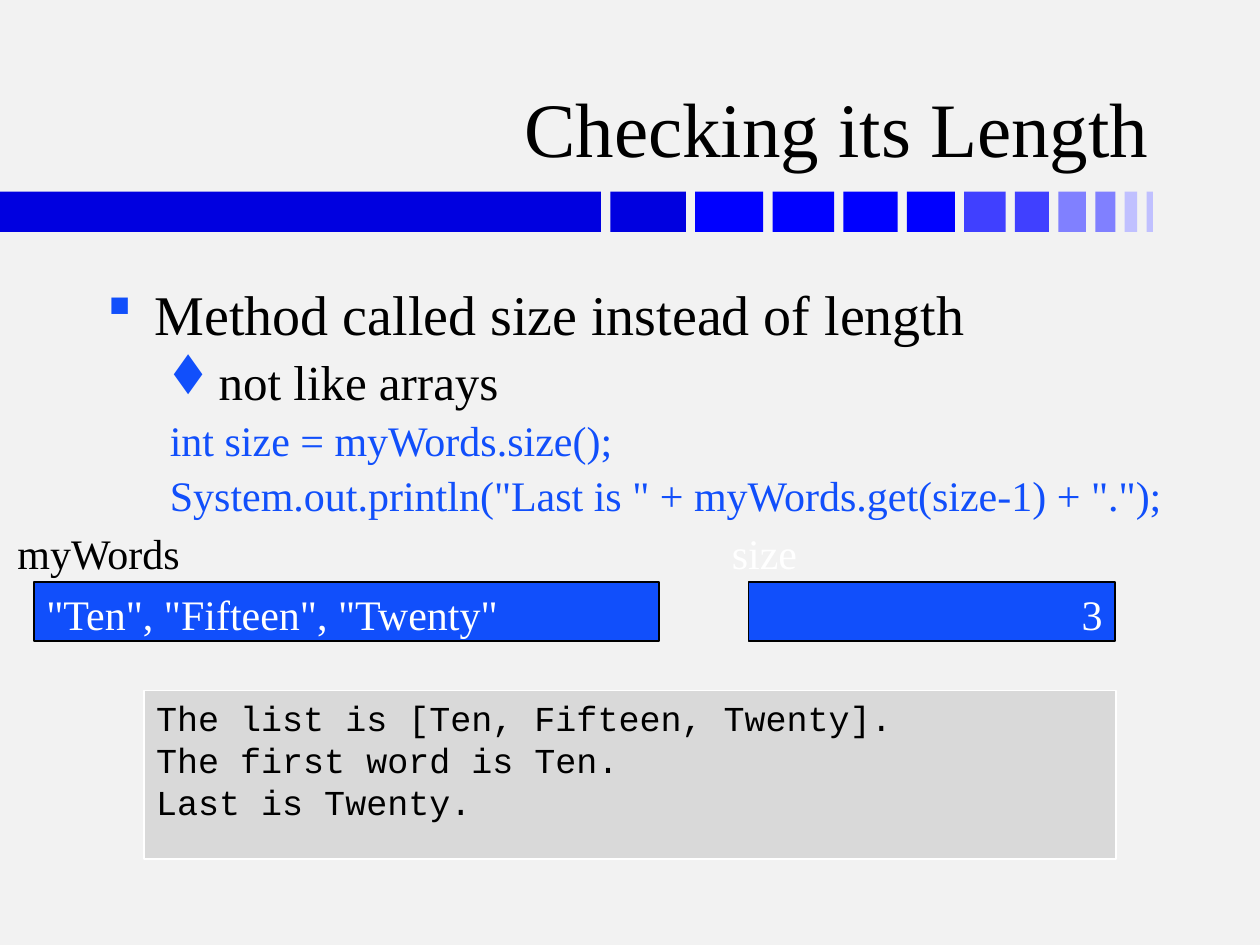
"""Build a slide about checking the length of a list."""
import pptx
import pptx.util
import pptx.dml.color
import pptx.enum.shapes
import pptx.enum.text
import lxml.etree

Inches, Pt = pptx.util.Inches, pptx.util.Pt
ALIGN = pptx.enum.text.PP_ALIGN
ANCHOR = pptx.enum.text.MSO_ANCHOR
SERIF, MONO, MARKS = "Times New Roman", "Courier New", "Wingdings"
SQUARE, DIAMOND = "§", "t"

COLORS = {
    "back": "F2F2F2", "black": "000000", "white": "FFFFFF",
    "blue": "114FFB", "gray": "D9D9D9", "navy": "0000E0",
    "pure": "0000FF", "mid": "4040FF", "light": "8080FF", "pale": "C0C0FF",
}
BARS = [
    (4.77, "navy"), (0.6, "navy"), (0.54, "pure"), (0.49, "pure"),
    (0.43, "pure"), (0.38, "pure"), (0.33, "mid"), (0.27, "mid"),
    (0.22, "light"), (0.16, "light"), (0.1, "pale"), (0.05, "pale"),
]
BARS_END = 9.15
TITLE = "Checking its Length"
BODY = [
    ("Method called size instead of length", 0, SQUARE, 32, "black"),
    ("not like arrays", 1, DIAMOND, 28, "black"),
    ("int size = myWords.size();", 1, None, 24, "blue"),
    ('System.out.println("Last is " + myWords.get(size-1) + ".");', 1, None, 24, "blue"),
]
LEVELS = [(0.38, -0.38, 20), (0.81, -0.31, 10)]
OUTPUT = ["The list is [Ten, Fifteen, Twenty].", "The first word is Ten.", "Last is Twenty."]
VALUES = [
    ('"Ten", "Fifteen", "Twenty"', 0.27, 4.96, ALIGN.LEFT),
    ("3", 5.94, 2.91, ALIGN.RIGHT),
]
LABELS = [("myWords", 0.04, 1.5, "black"), ("size", 5.71, 0.75, "white")]


def paint(color):
    return pptx.dml.color.RGBColor.from_string(COLORS[color])


def style(para, size, color, font=SERIF):
    for run in para.runs:
        run.font.size = Pt(size)
        run.font.name = font
        run.font.color.rgb = paint(color)


def write(shape, lines, size, color, font=SERIF, align=ALIGN.LEFT, anchor=ANCHOR.TOP, wrap=True):
    frame = shape.text_frame
    frame.text = "\n".join(lines)
    frame.word_wrap = wrap
    frame.vertical_anchor = anchor
    for para in frame.paragraphs:
        para.alignment = align
        style(para, size, color, font)


def add_text(slide, box, *args, **kwargs):
    shape = slide.shapes.add_textbox(*map(Inches, box))
    write(shape, *args, **kwargs)
    return shape


def add_box(slide, box, fill, line=None):
    kind = pptx.enum.shapes.MSO_SHAPE.RECTANGLE
    shape = slide.shapes.add_shape(kind, *map(Inches, box))
    shape.shadow.inherit = False
    shape.fill.solid()
    shape.fill.fore_color.rgb = paint(fill)
    if line:
        shape.line.color.rgb = paint(line)
        shape.line.width = Pt(1)
    else:
        shape.line.fill.background()
    return shape


def add_node(parent, tag, **attrs):
    name = pptx.oxml.ns.qn("a:" + tag)
    return lxml.etree.SubElement(parent, name, attrs)


def indent(para, level, mark):
    left, first, space = LEVELS[level]
    para.level = level
    props = para._p.get_or_add_pPr()
    add_node(add_node(props, "spcBef"), "spcPct", val=str(space * 1000))
    if mark:
        add_node(add_node(props, "buClr"), "srgbClr", val=COLORS["blue"])
        add_node(props, "buFont", typeface=MARKS, pitchFamily="2", charset="2")
        add_node(props, "buChar", char=mark)
    else:
        left, first = left + first, 0
        add_node(props, "buNone")
    props.set("marL", str(Inches(left)))
    props.set("indent", str(Inches(first)))


def add_bars(slide):
    gap = (BARS_END - sum(width for width, _ in BARS)) / (len(BARS) - 1)
    left = 0
    for width, color in BARS:
        add_box(slide, (left, 1.52, width, 0.32), color)
        left += width + gap


def add_body(slide):
    lines = [row[0] for row in BODY]
    shape = add_text(slide, (0.75, 2.17, 8.9, 4.5), lines, 24, "black")
    for para, (_, level, mark, size, color) in zip(shape.text_frame.paragraphs, BODY):
        style(para, size, color)
        indent(para, level, mark)


def main():
    deck = pptx.Presentation()
    deck.slide_width, deck.slide_height = Inches(10), Inches(7.5)
    slide = deck.slides.add_slide(deck.slide_layouts[6])
    slide.background.fill.solid()
    slide.background.fill.fore_color.rgb = paint("back")
    add_bars(slide)
    add_text(slide, (0.74, 0.19, 8.48, 1.23), [TITLE], 44, "black",
             align=ALIGN.RIGHT, anchor=ANCHOR.BOTTOM)
    add_body(slide)
    write(add_box(slide, (1.14, 5.48, 7.72, 1.34), "gray", "white"), OUTPUT, 20, "black", MONO)
    for text, left, width, align in VALUES:
        box = add_box(slide, (left, 4.62, width, 0.47), "blue", "black")
        write(box, [text], 24, "white", align=align)
    for text, left, width, color in LABELS:
        add_text(slide, (left, 4.14, width, 0.5), [text], 24, color, wrap=False)
    deck.save("out.pptx")


if __name__ == "__main__":
    main()
